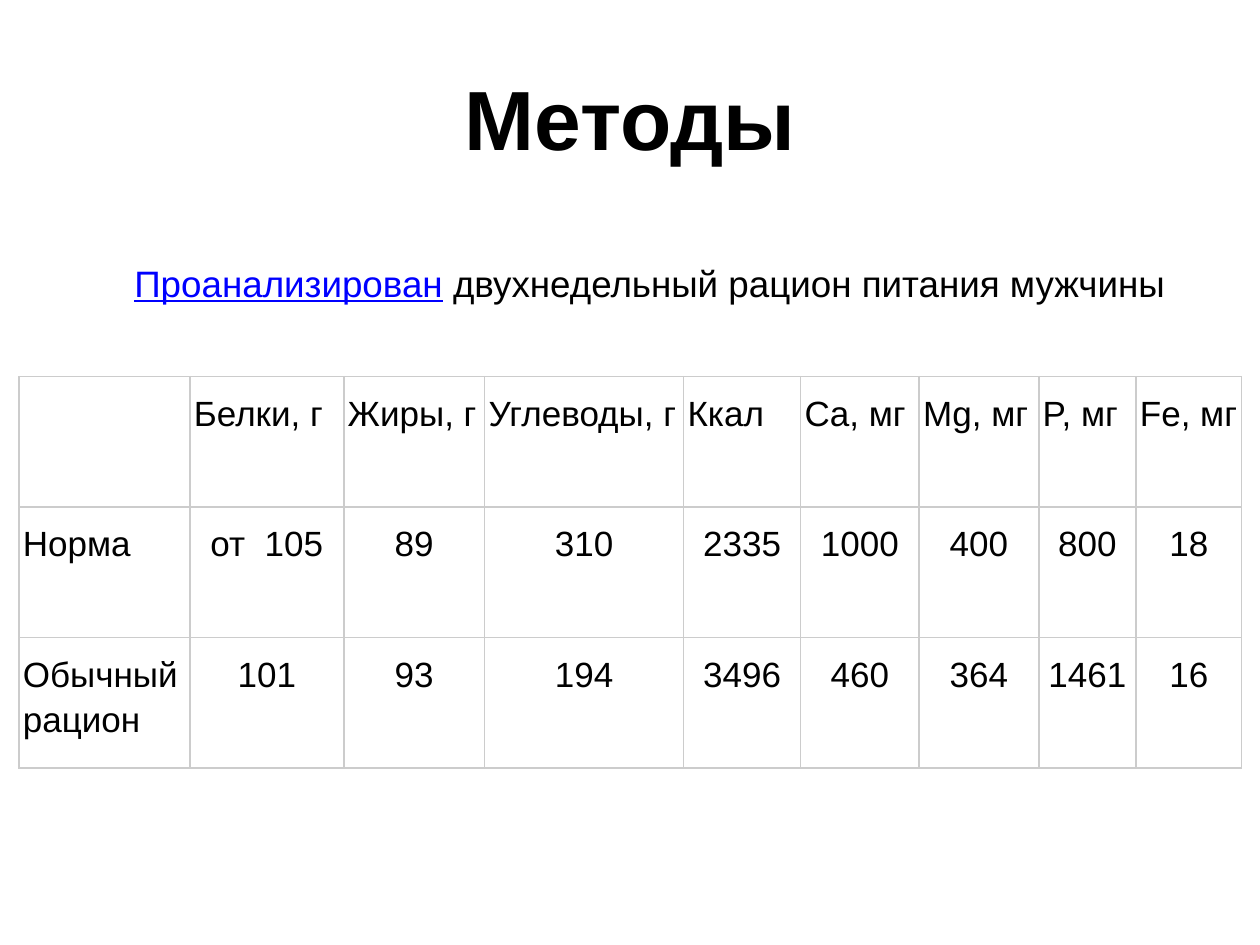
import pptx
import pptx.dml.color
import pptx.enum.text
import pptx.oxml.ns
import pptx.util
from lxml import etree
from pptx.util import Cm

FONT = "Arial"
BLACK = "000000"
LINK_BLUE = "0000FF"
BORDER_GRAY = "CCCCCC"
ALIGN = pptx.enum.text.PP_ALIGN
ANCHOR = pptx.enum.text.MSO_ANCHOR

COLUMN_WIDTHS = [3.45, 3.1, 2.84, 4.01, 2.36, 2.39, 2.41, 1.96, 2.13]
ROW_HEIGHT = 2.63
DIET_ROWS = [
    ["", "Белки, г", "Жиры, г", "Углеводы, г", "Ккал", "Ca, мг", "Mg, мг", "P, мг", "Fe, мг"],
    ["Норма", "от  105", "89", "310", "2335", "1000", "400", "800", "18"],
    ["Обычный рацион", "101", "93", "194", "3496", "460", "364", "1461", "16"],
]


def color(hex_string):
    return pptx.dml.color.RGBColor.from_string(hex_string)


def format_font(font, size, hex_string=BLACK, bold=False, underline=False):
    font.name = FONT
    font.size = pptx.util.Pt(size)
    font.color.rgb = color(hex_string)
    font.bold = bold
    font.underline = underline


def add_centered_text(slide, left, top, width, height, anchor=ANCHOR.TOP):
    """Add an empty wrapping text box and return its centred paragraph."""
    text_frame = slide.shapes.add_textbox(Cm(left), Cm(top), Cm(width), Cm(height)).text_frame
    text_frame.word_wrap = True
    text_frame.vertical_anchor = anchor
    paragraph = text_frame.paragraphs[0]
    paragraph.alignment = ALIGN.CENTER
    return paragraph


def add_run(paragraph, text, size, **style):
    run = paragraph.add_run()
    run.text = text
    format_font(run.font, size, **style)


def set_borders(cell, hex_string, width):
    properties = cell._tc.get_or_add_tcPr()
    qn = pptx.oxml.ns.qn
    for side in ("a:lnL", "a:lnR", "a:lnT", "a:lnB"):
        line = etree.SubElement(properties, qn(side), w=str(pptx.util.Pt(width)))
        fill = etree.SubElement(line, qn("a:solidFill"))
        etree.SubElement(fill, qn("a:srgbClr"), val=hex_string)


def format_cell(cell, text, alignment):
    set_borders(cell, BORDER_GRAY, 1)
    cell.fill.background()
    cell.margin_left = cell.margin_right = Cm(0.08)
    cell.margin_top = cell.margin_bottom = Cm(0.25)
    cell.text_frame.text = text
    paragraph = cell.text_frame.paragraphs[0]
    paragraph.alignment = alignment
    paragraph.line_spacing = 1.15
    paragraph.space_before = pptx.util.Pt(12)
    for run in paragraph.runs:
        format_font(run.font, 20)


def add_diet_table(slide, left, top):
    row_count, column_count = len(DIET_ROWS), len(COLUMN_WIDTHS)
    table = slide.shapes.add_table(
        row_count, column_count, Cm(left), Cm(top),
        Cm(sum(COLUMN_WIDTHS)), Cm(ROW_HEIGHT * row_count),
    ).table
    table.first_row = False
    table.horz_banding = False
    for column, width in zip(table.columns, COLUMN_WIDTHS):
        column.width = Cm(width)
    for row_index, texts in enumerate(DIET_ROWS):
        table.rows[row_index].height = Cm(ROW_HEIGHT)
        for column_index, text in enumerate(texts):
            is_value = row_index > 0 and column_index > 0
            alignment = ALIGN.CENTER if is_value else ALIGN.LEFT
            format_cell(table.cell(row_index, column_index), text, alignment)


def main():
    presentation = pptx.Presentation()
    presentation.slide_width = Cm(25.4)
    presentation.slide_height = Cm(19.05)
    slide = presentation.slides.add_slide(presentation.slide_layouts[6])

    title = add_centered_text(slide, 1.27, 0.76, 22.86, 3.18, ANCHOR.MIDDLE)
    add_run(title, "Методы", 48, bold=True)

    subtitle = add_centered_text(slide, 1.9, 5.13, 22.4, 1.12)
    add_run(subtitle, "Проанализирован", 21, hex_string=LINK_BLUE, underline=True)
    add_run(subtitle, " двухнедельный рацион питания мужчины", 21)

    add_diet_table(slide, 0.38, 7.59)
    presentation.save("out.pptx")


if __name__ == "__main__":
    main()
